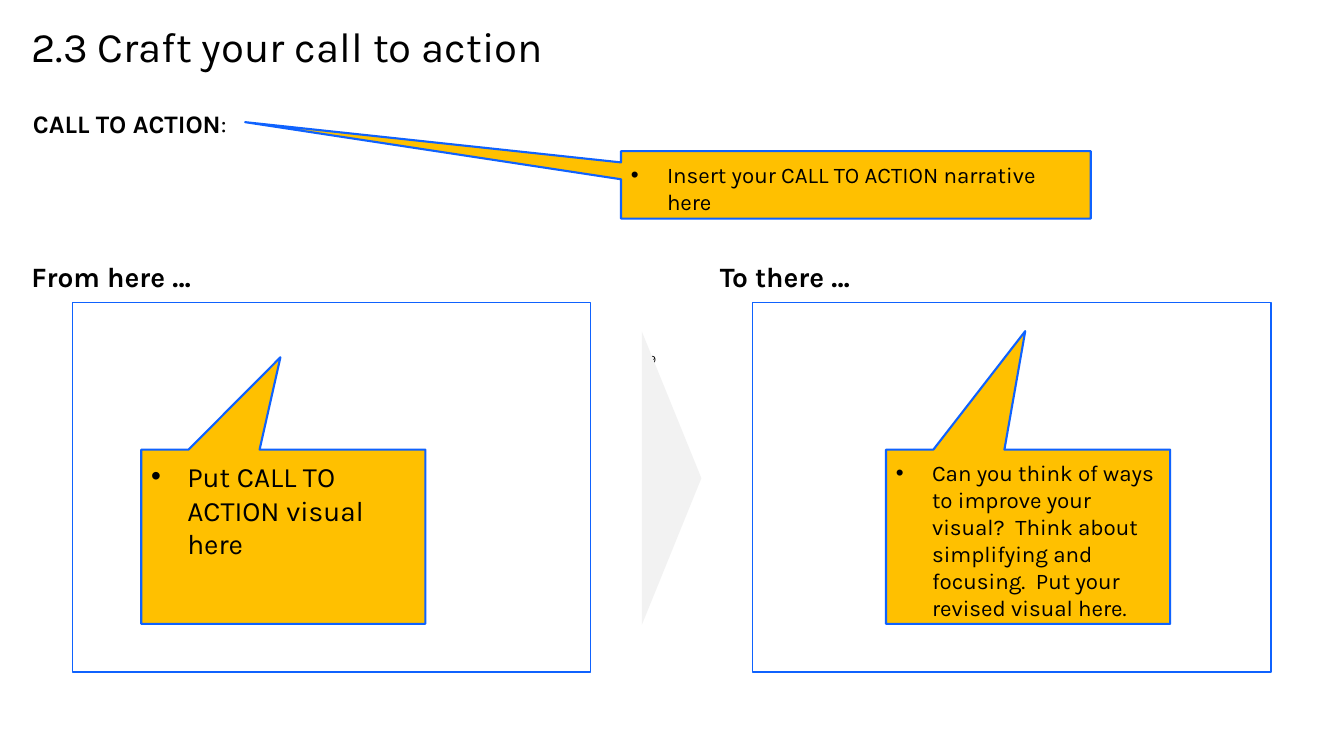
from dataclasses import dataclass

from lxml import etree
from pptx import Presentation
from pptx import util as u
from pptx.dml.color import RGBColor
from pptx.enum import shapes, text
from pptx.oxml import ns

SHAPE = shapes.MSO_SHAPE
ANCHOR = text.MSO_ANCHOR


@dataclass(frozen=True)
class Theme:
    """Fonts, colours and type sizes of the slide."""
    font: str = "Karla"
    ink: str = "000000"
    outline: str = "0F62FE"
    note: str = "FFC000"
    arrow: str = "F2F2F2"
    title: int = 30
    heading: int = 20
    label: int = 18
    body: int = 16
    number: int = 8


class SlideBuilder:
    """Draws themed elements on one slide."""

    def __init__(self, slide, theme):
        self.slide = slide
        self.theme = theme

    def set_text(self, frame, content, size, bold=False, anchor=ANCHOR.TOP,
                 align=text.PP_ALIGN.LEFT, inset=0.0, wrap=True, bullet=False):
        """Put text in a frame and return its paragraph."""
        frame.word_wrap = wrap
        frame.vertical_anchor = anchor
        frame.margin_left = frame.margin_right = u.Cm(inset)
        frame.margin_top = frame.margin_bottom = u.Cm(inset)
        paragraph = frame.paragraphs[0]
        paragraph.alignment = align
        if bullet:
            properties = paragraph._p.get_or_add_pPr()
            properties.set("marL", str(u.Cm(0.91)))
            properties.set("indent", str(-u.Cm(0.91)))
            font = etree.SubElement(properties, ns.qn("a:buFont"))
            font.set("typeface", "Arial")
            mark = etree.SubElement(properties, ns.qn("a:buChar"))
            mark.set("char", "•")
        self.add_run(paragraph, content, size, bold)
        return paragraph

    def add_run(self, paragraph, content, size, bold=False):
        """Append a styled run to a paragraph."""
        run = paragraph.add_run()
        run.text = content
        run.font.name = self.theme.font
        run.font.size = u.Pt(size)
        run.font.bold = bold
        run.font.color.rgb = RGBColor.from_string(self.theme.ink)

    def label(self, box, content, size, **style):
        """Add a text box and return its paragraph."""
        holder = self.slide.shapes.add_textbox(*map(u.Cm, box))
        return self.set_text(holder.text_frame, content, size, **style)

    def block(self, kind, box, fill=None, line_width=None):
        """Add a preset shape with optional fill and outline."""
        block = self.slide.shapes.add_shape(kind, *map(u.Cm, box))
        block.shadow.inherit = False
        if fill:
            block.fill.solid()
            block.fill.fore_color.rgb = RGBColor.from_string(fill)
        else:
            block.fill.background()
        if line_width:
            block.line.color.rgb = RGBColor.from_string(self.theme.outline)
            block.line.width = u.Pt(line_width)
        else:
            block.line.fill.background()
        return block

    def callout(self, box, tip, content, size):
        """Add a bulleted note whose pointer ends at the tip."""
        note = self.block(SHAPE.RECTANGULAR_CALLOUT, box, self.theme.note, 1.5)
        note.adjustments[0], note.adjustments[1] = tip
        self.set_text(note.text_frame, content, size, inset=0.25, bullet=True)


def main():
    """Build and save the call to action slide."""
    theme = Theme()
    deck = Presentation()
    deck.slide_width, deck.slide_height = u.Cm(33.87), u.Cm(19.05)
    page = SlideBuilder(deck.slides.add_slide(deck.slide_layouts[6]), theme)

    page.label((0.79, 0.53, 31.9, 2.11), "2.3 Craft your call to action", theme.title)
    page.label((16.21, 8.89, 0.33, 0.33), "19", theme.number, wrap=False,
               anchor=ANCHOR.MIDDLE, align=text.PP_ALIGN.RIGHT)
    call = page.label((0.58, 2.49, 31.9, 1.02), "CALL TO ACTION", theme.label,
                      bold=True, inset=0.25)
    page.add_run(call, ":", theme.label)

    arrow = page.block(SHAPE.ISOSCELES_TRIANGLE, (13.23, 11.3, 7.39, 1.5), theme.arrow)
    arrow.rotation = 90

    for heading, heading_left, frame_left in (
        ("From here …", 0.79, 1.83),
        ("To there …", 18.14, 18.97),
    ):
        page.label((heading_left, 6.3, 8.66, 1.32), heading, theme.heading,
                   bold=True, anchor=ANCHOR.MIDDLE)
        page.block(SHAPE.RECTANGLE, (frame_left, 7.62, 13.06, 9.32), line_width=1)

    page.callout((15.65, 3.81, 11.84, 1.7), (-1.3, -0.93),
                 "Insert your CALL TO ACTION narrative here", theme.body)
    page.callout((3.56, 11.33, 7.16, 4.39), (-0.01, -1.03),
                 "Put CALL TO ACTION visual here", theme.heading)
    page.callout((22.33, 11.33, 7.16, 4.39), (-0.01, -1.18),
                 "Can you think of ways to improve your visual?  Think about simplifying "
                 "and focusing.  Put your revised visual here.", theme.body)

    deck.save("out.pptx")


if __name__ == "__main__":
    main()
